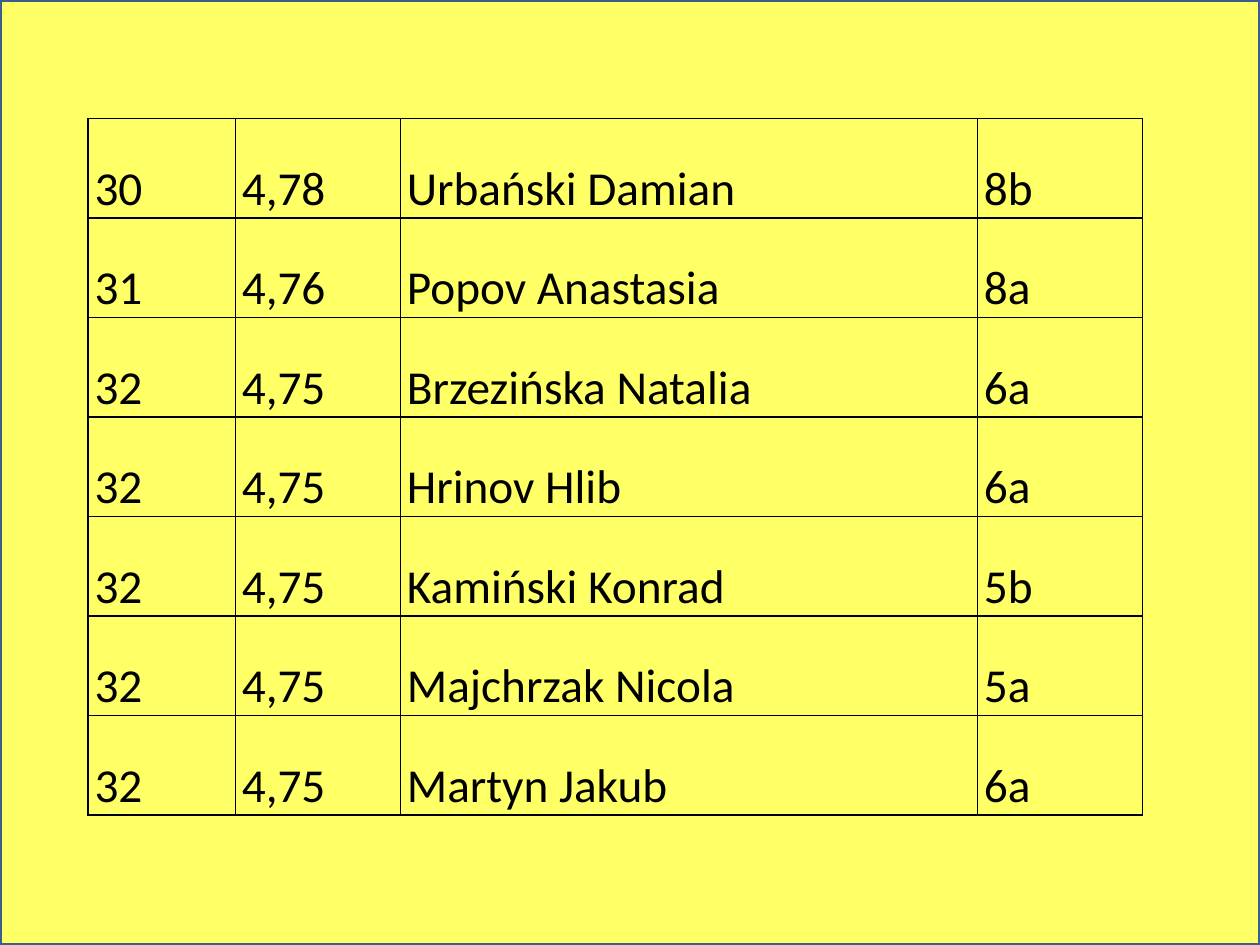
from lxml import etree
from pptx import Presentation
from pptx.dml.color import RGBColor
from pptx.enum.shapes import MSO_SHAPE
from pptx.enum.text import MSO_ANCHOR
from pptx.oxml.ns import qn
from pptx.util import Inches, Pt

RECTANGLE = MSO_SHAPE.RECTANGLE
BOTTOM = MSO_ANCHOR.BOTTOM
YELLOW = RGBColor(0xFF, 0xFF, 0x66)
BLUE = RGBColor(0x3A, 0x5F, 0x8C)
BLACK = RGBColor(0, 0, 0)

PAGE_WIDTH, PAGE_HEIGHT = 10, 7.5
COLUMN_WIDTHS = [1.17, 1.31, 4.58, 1.31]
ROW_HEIGHT = 0.79
RANKING = [
    ("30", "4,78", "Urbański Damian", "8b"),
    ("31", "4,76", "Popov Anastasia", "8a"),
    ("32", "4,75", "Brzezińska Natalia", "6a"),
    ("32", "4,75", "Hrinov Hlib", "6a"),
    ("32", "4,75", "Kamiński Konrad", "5b"),
    ("32", "4,75", "Majchrzak Nicola", "5a"),
    ("32", "4,75", "Martyn Jakub", "6a"),
]


class SlideBuilder:
    font_format = {"name": "Calibri", "size": Pt(27), "bold": False}
    cell_format = {
        "margin_left": Inches(0.05),
        "margin_right": Inches(0.05),
        "margin_top": 0,
        "margin_bottom": 0,
        "vertical_anchor": BOTTOM,
    }
    line_spacing = 1.15
    border_width = Pt(1)

    def __init__(self, page):
        self.page = page

    def background_panel(self, width, height):
        panel = self.page.shapes.add_shape(
            RECTANGLE, 0, 0, Inches(width), Inches(height))
        panel.shadow.inherit = False
        panel.fill.solid()
        panel.fill.fore_color.rgb = YELLOW
        panel.line.color.rgb = BLUE
        panel.line.width = Pt(2)

    def table(self, left, top, widths, row_height, rows):
        frame = self.page.shapes.add_table(
            len(rows), len(widths), Inches(left), Inches(top),
            Inches(sum(widths)), Inches(row_height * len(rows)))
        table = frame.table
        table.first_row = table.horz_banding = False
        for column, width in zip(table.columns, widths):
            column.width = Inches(width)
        for row, texts in zip(table.rows, rows):
            row.height = Inches(row_height)
            for cell, text in zip(row.cells, texts):
                self.cell(cell, text)

    def cell(self, cell, text):
        for name, value in self.cell_format.items():
            setattr(cell, name, value)
        self.cell_borders(cell)
        cell.fill.background()
        para = cell.text_frame.paragraphs[0]
        para.line_spacing = self.line_spacing
        span = para.add_run()
        span.text = text
        for name, value in self.font_format.items():
            setattr(span.font, name, value)
        span.font.color.rgb = BLACK

    def cell_borders(self, cell):
        properties = cell._tc.get_or_add_tcPr()
        for side in ("lnL", "lnR", "lnT", "lnB"):
            line = etree.SubElement(
                properties, qn(f"a:{side}"), w=str(self.border_width))
            fill = etree.SubElement(line, qn("a:solidFill"))
            etree.SubElement(fill, qn("a:srgbClr"), val=str(BLACK))


def main():
    deck = Presentation()
    deck.slide_width = Inches(PAGE_WIDTH)
    deck.slide_height = Inches(PAGE_HEIGHT)
    builder = SlideBuilder(deck.slides.add_slide(deck.slide_layouts[6]))
    builder.background_panel(PAGE_WIDTH, PAGE_HEIGHT)
    builder.table(0.7, 0.94, COLUMN_WIDTHS, ROW_HEIGHT, RANKING)
    deck.save("out.pptx")


if __name__ == "__main__":
    main()
